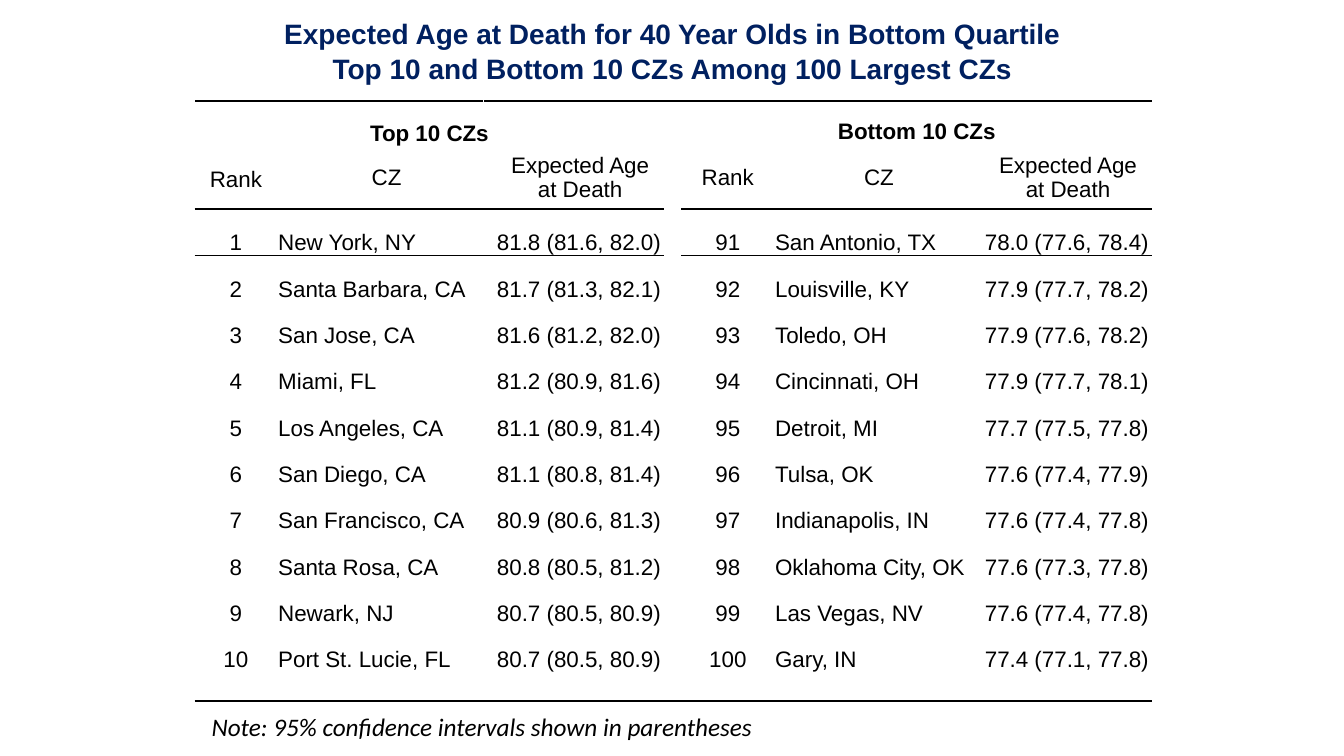
"""Build the slide ranking commuting zones by expected age at death."""
from lxml import etree
from pptx import Presentation
from pptx import util as u
from pptx.dml import color
from pptx.enum import text
from pptx.oxml import ns

C = {"navy": "002060", "black": "000000", "white": "FFFFFF"}
CENTER, LEFT = text.PP_ALIGN.CENTER, text.PP_ALIGN.LEFT
MIDDLE, BOTTOM = text.MSO_ANCHOR.MIDDLE, text.MSO_ANCHOR.BOTTOM


def add_text(p, words, c="black", **fmt):
    r = p.add_run()
    r.text = words
    for name, value in fmt.items():
        setattr(r.font, name, value)
    r.font.color.rgb = color.RGBColor.from_string(C[c])


def add_border(cell, side, c, width):
    tcPr = cell._tc.get_or_add_tcPr()
    ln = etree.SubElement(tcPr, ns.qn("a:ln" + side), w=str(u.Pt(width)))
    fill = etree.SubElement(ln, ns.qn("a:solidFill"))
    etree.SubElement(fill, ns.qn("a:srgbClr"), val=C[c])


prs = Presentation()
prs.slide_width, prs.slide_height = u.Inches(13.33), u.Inches(7.5)
s = prs.slides.add_slide(prs.slide_layouts[5])

title = s.shapes.title
title.left, title.top = u.Inches(1.17), u.Inches(0)
title.width, title.height = u.Inches(11), u.Inches(1)
tf = title.text_frame
tf.vertical_anchor = MIDDLE
tf.auto_size = text.MSO_AUTO_SIZE.NONE
for i, line in enumerate([
    "Expected Age at Death for 40 Year Olds in Bottom Quartile",
    "Top 10 and Bottom 10 CZs Among 100 Largest CZs",
]):
    p = tf.add_paragraph() if i else tf.paragraphs[0]
    p.alignment, p.space_before = CENTER, u.Pt(1)
    add_text(p, line, "navy", name="Arial", size=u.Pt(20), bold=True)

top = [
    ("New York, NY", "81.8 (81.6, 82.0)"),
    ("Santa Barbara, CA", "81.7 (81.3, 82.1)"),
    ("San Jose, CA", "81.6 (81.2, 82.0)"),
    ("Miami, FL", "81.2 (80.9, 81.6)"),
    ("Los Angeles, CA", "81.1 (80.9, 81.4)"),
    ("San Diego, CA", "81.1 (80.8, 81.4)"),
    ("San Francisco, CA", "80.9 (80.6, 81.3)"),
    ("Santa Rosa, CA", "80.8 (80.5, 81.2)"),
    ("Newark, NJ", "80.7 (80.5, 80.9)"),
    ("Port St. Lucie, FL", "80.7 (80.5, 80.9)"),
]
bottom = [
    ("San Antonio, TX", "78.0 (77.6, 78.4)"),
    ("Louisville, KY", "77.9 (77.7, 78.2)"),
    ("Toledo, OH", "77.9 (77.6, 78.2)"),
    ("Cincinnati, OH", "77.9 (77.7, 78.1)"),
    ("Detroit, MI", "77.7 (77.5, 77.8)"),
    ("Tulsa, OK", "77.6 (77.4, 77.9)"),
    ("Indianapolis, IN", "77.6 (77.4, 77.8)"),
    ("Oklahoma City, OK", "77.6 (77.3, 77.8)"),
    ("Las Vegas, NV", "77.6 (77.4, 77.8)"),
    ("Gary, IN", "77.4 (77.1, 77.8)"),
]
heads = ["Rank", "CZ", "", "Expected Age at Death"]
rows = [
    [""] * 8,
    ["Top 10 CZs", "", "", "", "", "Bottom 10 CZs", "", ""],
    heads + ["", "Rank", "CZ", "Expected Age at Death"],
]
for i, ((cz, age), (low_cz, low_age)) in enumerate(zip(top, bottom)):
    rows.append([str(i + 1), cz, "", age, "", str(i + 91), low_cz, low_age])
rows.append([""] * 8)
widths = [0.82, 2.05, 0.12, 1.67, 0.17, 0.92, 2.08, 1.67]
heights = [0.17, 0.28, 0.62] + [0.46] * 10 + [0.19]
last, gap = len(rows) - 1, 4

table = s.shapes.add_table(
    len(rows), len(widths), u.Inches(1.93), u.Inches(1),
    u.Inches(sum(widths)), u.Inches(sum(heights))).table
table.first_row = table.horz_banding = False
style = table._tbl.tblPr.find(ns.qn("a:tableStyleId"))
style.text = "{2D5ABB26-0587-4C30-8999-92F81FD0307C}"
for col, width in zip(table.columns, widths):
    col.width = u.Inches(width)
for row, height in zip(table.rows, heights):
    row.height = u.Inches(height)

spans = [(0, 0, 1), (0, 2, 7), (1, 0, 3), (1, 5, 7)]
spans += [(i, 1, 2) for i in range(2, last + 1)]
for i, first, end in spans:
    table.cell(i, first).merge(table.cell(i, end))

for i, row in enumerate(rows):
    header = i < 3
    for j, words in enumerate(row):
        cell = table.cell(i, j)
        cell.margin_left = cell.margin_right = u.Inches(0.06 if header else 0.01)
        cell.margin_top = u.Inches(0 if header else 0.01)
        cell.margin_bottom = 0
        cell.vertical_anchor = MIDDLE if header else BOTTOM
        p = cell.text_frame.paragraphs[0]
        p.alignment = CENTER if header or j in (0, 5) else LEFT
        if header and j == 0 and words:
            p.line_spacing = 1.15
        if words:
            add_text(p, words, name="Arial", size=u.Pt(16), bold=i == 1)
        else:
            size = "800" if i == 0 else "1600"
            etree.SubElement(p._p, ns.qn("a:endParaRPr"), sz=size)
        if i == 0:
            for side, c, width in [("L", "white", 1), ("R", "white", 1), ("T", "black", 1.5)]:
                add_border(cell, side, c, width)
        elif i in (2, 3) and j != gap:
            add_border(cell, "B" if i == 2 else "T", "black", 1)
        elif i == last:
            add_border(cell, "B", "black", 1.5)
        cell.fill.solid()
        cell.fill.fore_color.rgb = color.RGBColor.from_string(C["white"])

note = s.shapes.add_textbox(u.Inches(2), u.Inches(7.01), u.Inches(5.69), u.Inches(0.4))
tf = note.text_frame
tf.word_wrap = False
tf.auto_size = text.MSO_AUTO_SIZE.SHAPE_TO_FIT_TEXT
add_text(tf.paragraphs[0], "Note: 95% confidence intervals shown in parentheses",
         name="Calibri", size=u.Pt(18), italic=True)

prs.save("out.pptx")
